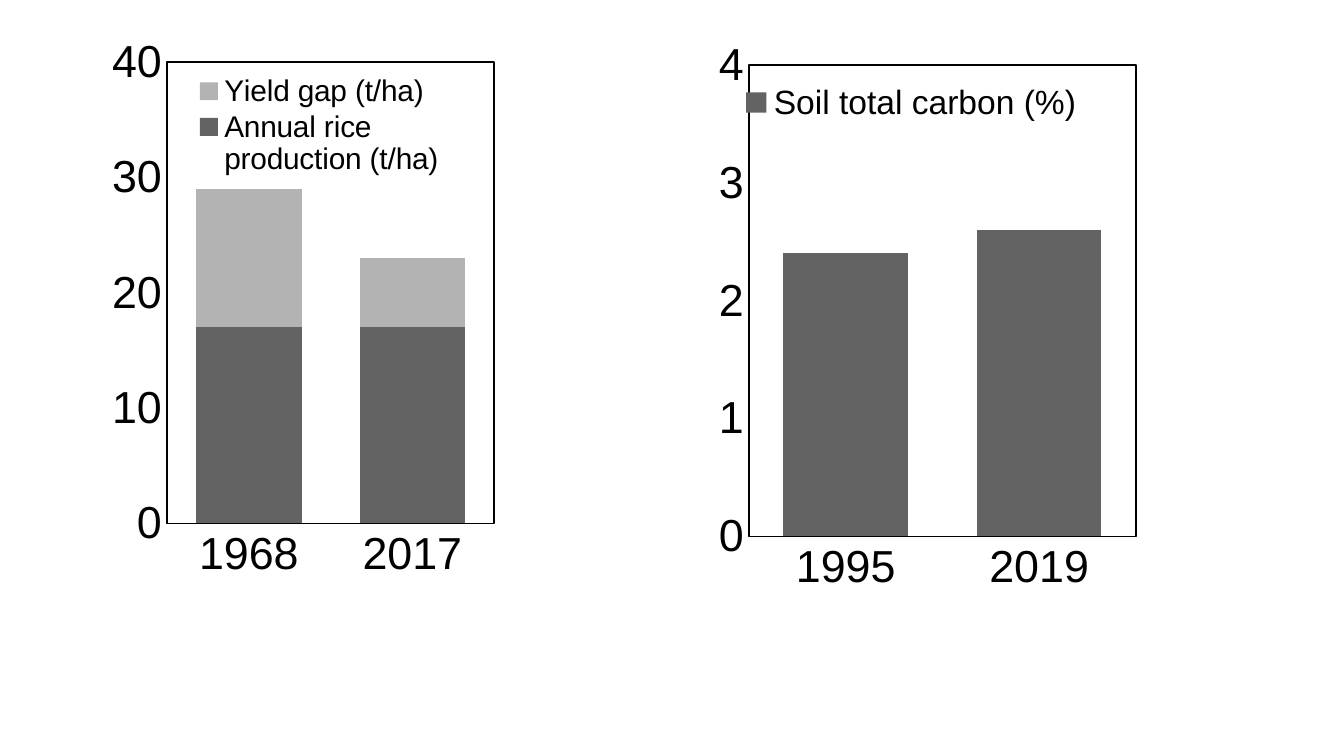
from dataclasses import dataclass

from lxml.etree import SubElement
from pptx import Presentation
from pptx.chart.data import CategoryChartData
from pptx.dml.color import RGBColor
from pptx.enum.chart import XL_CHART_TYPE as ChartType
from pptx.enum.chart import XL_LEGEND_POSITION as LegendPos
from pptx.enum.chart import XL_TICK_MARK as Tick
from pptx.oxml import parse_xml
from pptx.oxml.ns import nsdecls, qn
from pptx.util import Pt

Box = tuple[float, float, float, float]


@dataclass(frozen=True)
class Theme:
    font: str = "Arial"
    ink: str = "000000"
    bars: tuple[str, ...] = ("636363", "B3B3B3")
    axis_size: float = 24
    line: float = 0.75


@dataclass(frozen=True)
class BarPanel:
    box: Box  # points: left, top, width, height
    plot: Box  # fractions of the chart: x, y, width, height
    legend: Box  # fractions of the chart
    legend_size: float
    top: float
    step: float
    years: tuple[str, ...]
    series: tuple[tuple[str, tuple[float, ...]], ...]


THEME = Theme()

PANELS = (
    BarPanel(
        box=(336.2, 10.8, 330.5, 315.4),
        plot=(0.197, 0.076, 0.627, 0.801),
        legend=(0.18, 0.1, 0.56, 0.08),
        legend_size=18,
        top=4,
        step=1,
        years=("1995", "2019"),
        series=(("Soil total carbon (%)", (2.4, 2.6)),),
    ),
    BarPanel(
        box=(33.8, 17.3, 283, 301.7),
        plot=(0.197, 0.053, 0.619, 0.819),
        legend=(0.24, 0.07, 0.49, 0.19),
        legend_size=16,
        top=40,
        step=10,
        years=("1968", "2017"),
        series=(
            ("Annual rice production (t/ha)", (17, 17)),
            ("Yield gap (t/ha)", (12, 6)),
        ),
    ),
)


def set_layout(parent, index: int, box: Box, inner: bool = False) -> None:
    """Place a plot area or legend by fractions of its chart."""
    for old in parent.findall(qn("c:layout")):
        parent.remove(old)
    layout = parse_xml(f"<c:layout {nsdecls('c')}/>")
    manual = SubElement(layout, qn("c:manualLayout"))
    entries = [("layoutTarget", "inner")] if inner else []
    entries += [("xMode", "edge"), ("yMode", "edge")]
    entries += zip("xywh", box)
    for tag, value in entries:
        SubElement(manual, qn(f"c:{tag}")).set("val", str(value))
    parent.insert(index, layout)


def frame_plot(plot_area) -> None:
    for old in plot_area.findall(qn("c:spPr")):
        plot_area.remove(old)
    plot_area.append(parse_xml(
        f'<c:spPr {nsdecls("c", "a")}><a:noFill/><a:ln w="{Pt(THEME.line)}">'
        f'<a:solidFill><a:srgbClr val="{THEME.ink}"/></a:solidFill></a:ln></c:spPr>'
    ))


def style_font(font, size: float) -> None:
    font.name = THEME.font
    font.size = Pt(size)
    font.bold = False
    font.color.rgb = RGBColor.from_string(THEME.ink)


def style_axis(axis) -> None:
    axis.has_major_gridlines = False
    axis.major_tick_mark = axis.minor_tick_mark = Tick.NONE
    axis.format.line.color.rgb = RGBColor.from_string(THEME.ink)
    axis.format.line.width = Pt(THEME.line)
    style_font(axis.tick_labels.font, THEME.axis_size)


def add_bar_panel(slide, panel: BarPanel) -> None:
    data = CategoryChartData()
    data.categories = panel.years
    for name, values in panel.series:
        data.add_series(name, values)
    chart = slide.shapes.add_chart(
        ChartType.COLUMN_STACKED, *map(Pt, panel.box), data
    ).chart
    chart.has_title = False
    style_font(chart.font, THEME.axis_size)

    plot = chart.plots[0]
    plot.vary_by_categories = False
    plot.gap_width, plot.overlap = 55, 100
    for series, color in zip(plot.series, THEME.bars):
        series.format.fill.solid()
        series.format.fill.fore_color.rgb = RGBColor.from_string(color)

    style_axis(chart.category_axis)
    values_axis = chart.value_axis
    style_axis(values_axis)
    values_axis.minimum_scale, values_axis.maximum_scale = 0, panel.top
    values_axis.major_unit = panel.step
    values_axis.tick_labels.number_format = "0"
    values_axis.tick_labels.number_format_is_linked = False

    chart.has_legend = True
    legend = chart.legend
    legend.position = LegendPos.RIGHT
    legend.include_in_layout = True
    style_font(legend.font, panel.legend_size)
    set_layout(legend._element, 1, panel.legend)

    plot_area = chart._chartSpace.chart.plotArea
    set_layout(plot_area, 0, panel.plot, inner=True)
    frame_plot(plot_area)


def main() -> None:
    prs = Presentation()
    prs.slide_width, prs.slide_height = Pt(720), Pt(405)
    s = prs.slides.add_slide(prs.slide_layouts[6])
    for panel in PANELS:
        add_bar_panel(s, panel)
    prs.save("out.pptx")


if __name__ == "__main__":
    main()
